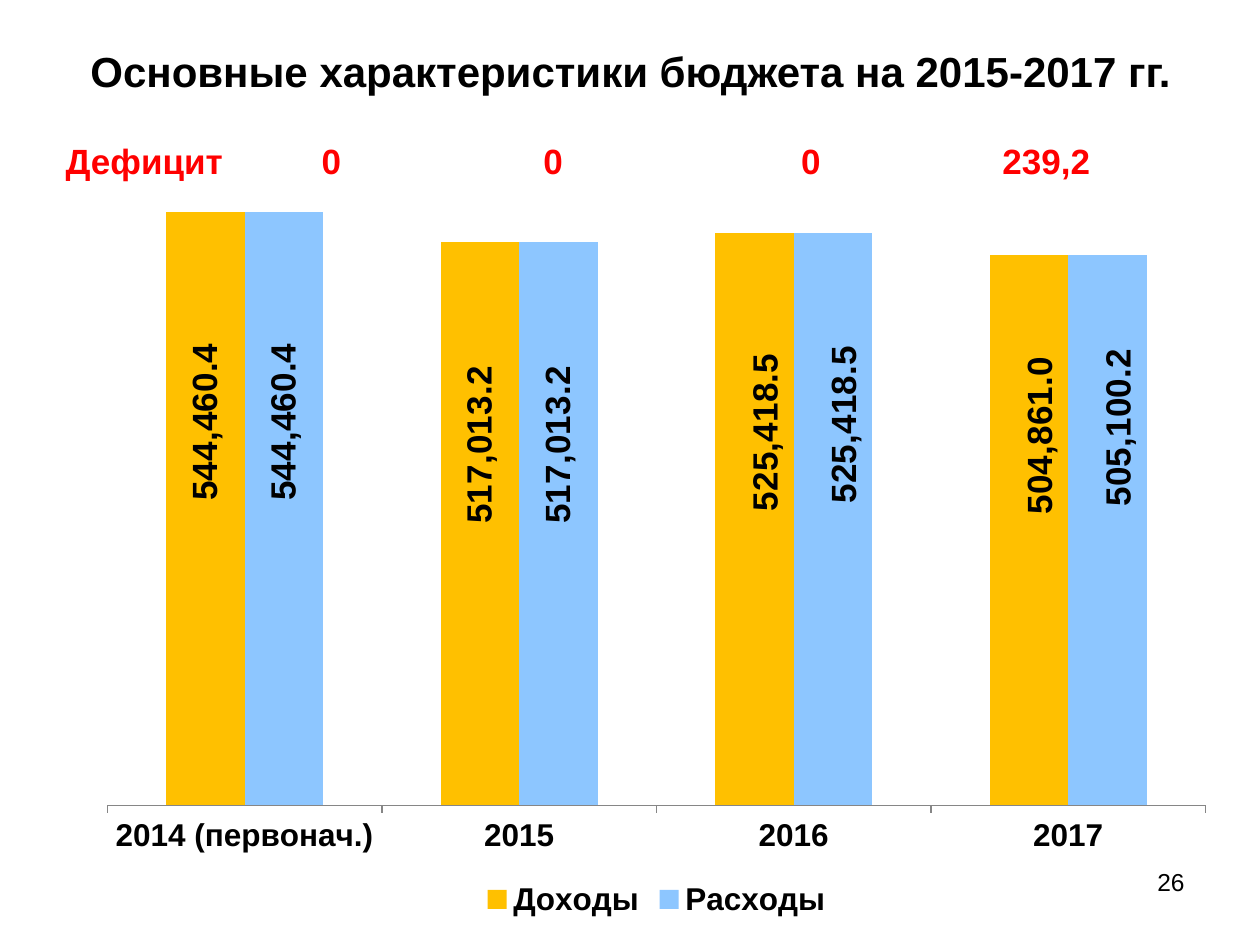
from lxml import etree
from pptx import Presentation
from pptx.chart.data import CategoryChartData
from pptx.dml.color import RGBColor
from pptx.enum import chart as ch, text
from pptx.oxml.ns import qn
from pptx.util import Inches, Pt

# Content
TITLE = "Основные характеристики бюджета на 2015-2017 гг."
PAGE = "26"
DEFICIT = ["Дефицит", "0", "0", "0", "239,2"]
DEFICIT_WIDTHS = [1.5, 1.42, 2.1, 1.99, 1.75]
YEARS = ["2014 (первонач.)", "2015", "2016", "2017"]
# name, colour, values, label shifts from the bar centre (fractions of the chart)
BUDGET = [
    ("Доходы", "income", [544460.4, 517013.2, 525418.5, 504861.0],
     [(0, -0.11), (0, -0.1), (0.01, -0.11), (0.01, -0.12)]),
    ("Расходы", "expense", [544460.4, 517013.2, 525418.5, 505100.2],
     [(0, -0.11), (0, -0.1), (0.01, -0.12), (0.01, -0.13)]),
]
COLORS = {"income": "FFC000", "expense": "8DC6FF", "text": "000000",
          "deficit": "FF0000", "paper": "FFFFFF", "axis": "868686"}


def color(key):
    return RGBColor.from_string(COLORS[key])


def style(font, size, bold=True, key="text"):
    font.name, font.size, font.bold = "Arial", Pt(size), bold
    font.color.rgb = color(key)


def add_text(slide, box, words, size, bold, align, anchor):
    frame = slide.shapes.add_textbox(*map(Inches, box)).text_frame
    frame.word_wrap = True
    frame.vertical_anchor = anchor
    line = frame.paragraphs[0]
    line.text, line.alignment = words, align
    style(line.font, size, bold)


def manual_layout(**settings):
    layout = etree.Element(qn("c:layout"))
    manual = etree.SubElement(layout, qn("c:manualLayout"))
    for tag, value in settings.items():
        etree.SubElement(manual, qn(f"c:{tag}")).set("val", str(value))
    return layout


prs = Presentation()
prs.slide_width, prs.slide_height = Inches(10), Inches(7.5)
slide = prs.slides.add_slide(prs.slide_layouts[6])

# Title
add_text(slide, (0.17, 0.3, 9.67, 0.53), TITLE, 24, True,
         text.PP_ALIGN.CENTER, text.MSO_ANCHOR.MIDDLE)

# Budget chart
data = CategoryChartData(number_format="#,##0.0")
data.categories = YEARS
for name, _, values, _ in BUDGET:
    data.add_series(name, values)
chart = slide.shapes.add_chart(
    ch.XL_CHART_TYPE.COLUMN_CLUSTERED, Inches(0.67), Inches(1.08),
    Inches(9.08), Inches(6.25), data).chart
style(chart.font, 18)
chart.has_title = False
chart.has_legend = True
chart.legend.position = ch.XL_LEGEND_POSITION.BOTTOM
chart.legend.include_in_layout = False
style(chart.legend.font, 18)

years_axis, value_axis = chart.category_axis, chart.value_axis
years_axis.major_tick_mark = ch.XL_TICK_MARK.OUTSIDE
years_axis.format.line.color.rgb = color("axis")
style(years_axis.tick_labels.font, 18)
value_axis.visible = False
value_axis.has_major_gridlines = False
value_axis.minimum_scale, value_axis.maximum_scale = 0, 600000

plot = chart.plots[0]
plot.gap_width, plot.overlap, plot.vary_by_categories = 150, 0, False
plot_area = chart._chartSpace.find(".//" + qn("c:plotArea"))
for old in plot_area.findall(qn("c:layout")):
    plot_area.remove(old)
plot_area.insert(0, manual_layout(
    layoutTarget="inner", xMode="edge", yMode="edge", x=0.02, y=0.02, w=0.96, h=0.83))

# Upright value labels
for series, (_, key, _, shifts) in zip(plot.series, BUDGET):
    series.format.fill.solid()
    series.format.fill.fore_color.rgb = color(key)
    for i in range(len(shifts)):
        label = series.points[i].data_label
        style(label.font, 20)
        label.position = ch.XL_LABEL_POSITION.CENTER
    for label, (x, y) in zip(series._element.iter(qn("c:dLbl")), shifts):
        label.insert(1, manual_layout(x=x, y=y))
        turn = label.find(".//" + qn("a:bodyPr"))
        turn.set("rot", "-5400000")
        turn.set("vert", "horz")

# Page number
add_text(slide, (7.17, 6.83, 2.33, 0.52), PAGE, 14, False,
         text.PP_ALIGN.RIGHT, text.MSO_ANCHOR.TOP)

# Deficit row
deficit = slide.shapes.add_table(1, len(DEFICIT), Inches(0.42), Inches(1.08),
                                 Inches(sum(DEFICIT_WIDTHS)), Inches(0.42)).table
deficit.first_row = deficit.horz_banding = False
for i, (words, width) in enumerate(zip(DEFICIT, DEFICIT_WIDTHS)):
    deficit.columns[i].width = Inches(width)
    cell = deficit.cell(0, i)
    cell.fill.solid()
    cell.fill.fore_color.rgb = color("paper")
    line = cell.text_frame.paragraphs[0]
    line.text = words
    line.alignment = text.PP_ALIGN.CENTER if i else text.PP_ALIGN.LEFT
    style(line.font, 20, key="deficit")

prs.save("out.pptx")
